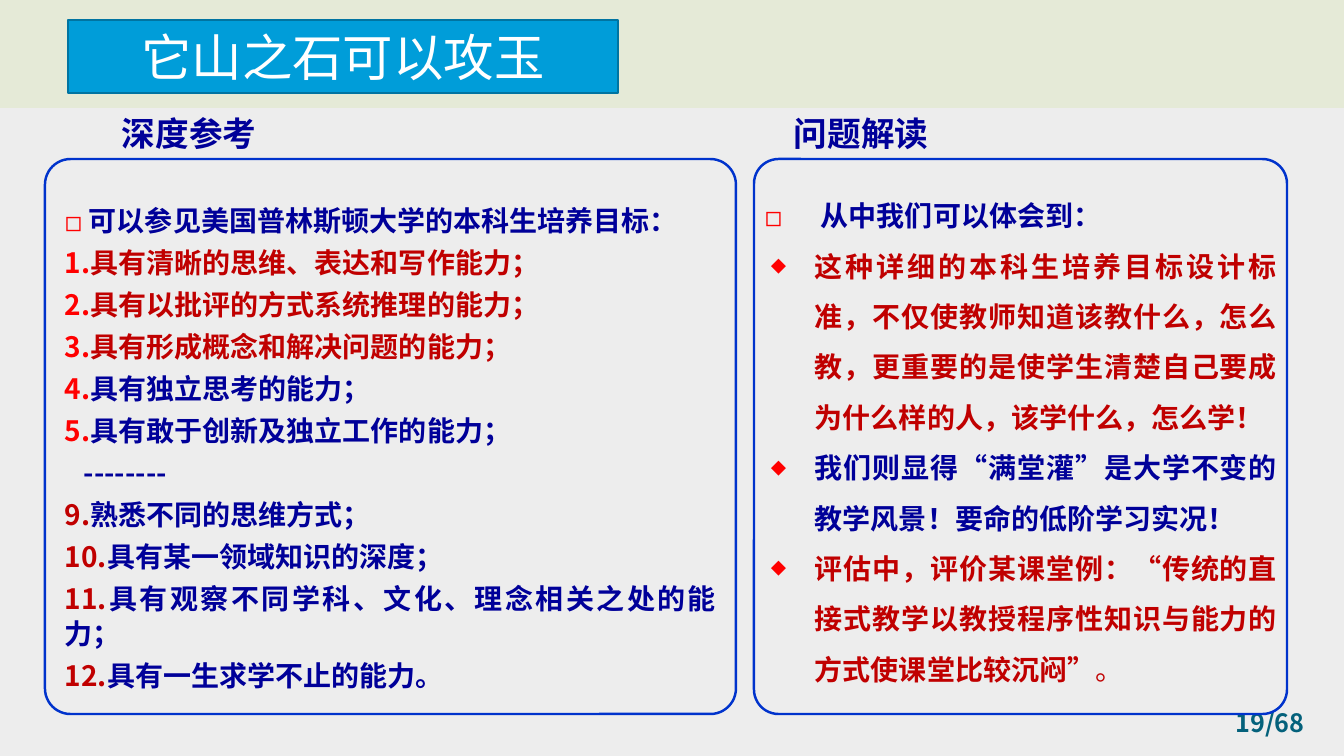
from lxml.etree import SubElement
from pptx import Presentation
from pptx.dml.color import RGBColor
from pptx.enum.shapes import MSO_SHAPE
from pptx.enum.text import MSO_ANCHOR, PP_ALIGN
from pptx.oxml.ns import qn
from pptx.util import Pt

EMU_PER_PX = 914400 / 100.8
NAVY, CRIMSON, RED, BORDER = "000099", "C00000", "FF0000", "0033CC"


def px(length):
    return round(length * EMU_PER_PX)


def rgb(hex_colour):
    return RGBColor.from_string(hex_colour)


def add_bullet(paragraph, marker, size):
    """Put a red marker on the paragraph; the marker "1." numbers it automatically."""
    properties = paragraph._p.get_or_add_pPr()
    SubElement(SubElement(properties, qn("a:buClr")), qn("a:srgbClr"), val=RED)
    SubElement(properties, qn("a:buSzPct"), val=str(size * 1000))
    if marker == "1.":
        SubElement(properties, qn("a:buFont"), typeface="+mj-lt")
        SubElement(properties, qn("a:buAutoNum"), type="arabicPeriod")
    else:
        SubElement(properties, qn("a:buFont"), typeface=SlideBuilder.FONT)
        SubElement(properties, qn("a:buChar"), char=marker)


class SlideBuilder:
    FONT = "Noto Sans CJK SC"

    def __init__(self, slide, background):
        self.slide = slide
        slide.background.fill.solid()
        slide.background.fill.fore_color.rgb = rgb(background)

    def style_font(self, font, size, colour, bold=True):
        font.name, font.size, font.bold = self.FONT, Pt(size), bold
        font.color.rgb = rgb(colour)
        SubElement(font._element, qn("a:ea"), typeface=self.FONT)

    def title(self, text, box, size, fill, line):
        title = self.slide.shapes.title
        title.left, title.top, title.width, title.height = map(px, box)
        title.fill.solid()
        title.fill.fore_color.rgb = rgb(fill)
        title.line.color.rgb, title.line.width = rgb(line), Pt(2)
        frame = title.text_frame
        frame.text = text
        frame.vertical_anchor = MSO_ANCHOR.MIDDLE
        frame.margin_left = frame.margin_top = frame.margin_right = frame.margin_bottom = 0
        frame.paragraphs[0].alignment = PP_ALIGN.CENTER
        self.style_font(frame.paragraphs[0].font, size, "FFFFFF", bold=False)
        title.element.getparent().append(title.element)

    def band(self, box, colour, opacity):
        band = self.slide.shapes.add_shape(MSO_SHAPE.RECTANGLE, *map(px, box))
        band.shadow.inherit = False
        band.line.fill.background()
        band.fill.solid()
        band.fill.fore_color.rgb = rgb(colour)
        tint = band.element.spPr.find(".//" + qn("a:srgbClr"))
        SubElement(tint, qn("a:alpha"), val=str(opacity * 1000))

    def panel(self, box):
        panel = self.slide.shapes.add_shape(MSO_SHAPE.ROUNDED_RECTANGLE, *map(px, box))
        panel.shadow.inherit = False
        panel.adjustments[0] = 0.046
        panel.fill.background()
        panel.line.color.rgb, panel.line.width = rgb(BORDER), Pt(1.75)

    def text_frame(self, box):
        frame = self.slide.shapes.add_textbox(*map(px, box)).text_frame
        frame.word_wrap = True
        return frame

    def label(self, text, box, size, colour, spacing=None, align=PP_ALIGN.LEFT):
        frame = self.text_frame(box)
        frame.vertical_anchor = MSO_ANCHOR.TOP if spacing else MSO_ANCHOR.MIDDLE
        paragraph = frame.paragraphs[0]
        paragraph.text, paragraph.alignment = text, align
        if spacing:
            paragraph.line_spacing = Pt(spacing)
        self.style_font(paragraph.font, size, colour)

    def body(self, box, items, first_spacing, spacing, gap):
        """Items are (marker, marker size, indent, hanging, [(text, colour, bold), ...])."""
        frame = self.text_frame(box)
        for index, (marker, marker_size, indent, hanging, runs) in enumerate(items):
            paragraph = frame.add_paragraph() if index else frame.paragraphs[0]
            paragraph.alignment = PP_ALIGN.JUSTIFY
            paragraph.line_spacing = Pt(spacing if index else first_spacing)
            paragraph.space_before = Pt(gap if index else 0)
            properties = paragraph._p.get_or_add_pPr()
            properties.set("marL", str(px(indent)))
            properties.set("indent", str(-px(hanging)))
            properties.set("hangingPunct", "0")
            if marker:
                add_bullet(paragraph, marker, marker_size)
            if len(runs) == 1:
                paragraph.text = runs[0][0]
                self.style_font(paragraph.font, 20, *runs[0][1:])
                continue
            for text, colour, bold in runs:
                run = paragraph.add_run()
                run.text = text
                self.style_font(run.font, 20, colour, bold)


EARLY_GOALS = [
    ("具有清晰的思维、表达和写作能力；", CRIMSON),
    ("具有以批评的方式系统推理的能力；", CRIMSON),
    ("具有形成概念和解决问题的能力；", CRIMSON),
    ("具有独立思考的能力；", NAVY),
    ("具有敢于创新及独立工作的能力；", NAVY),
]
LATE_GOALS = [
    "熟悉不同的思维方式；",
    "具有某一领域知识的深度；",
    "具有观察不同学科、文化、理念相关之处的能力；",
    "具有一生求学不止的能力。",
]
INSIGHTS = [
    [("这种详细的本科生培养目标设计标准，不仅使教师知道该教什么，怎么教，更重要的是使学生清楚自己要成为什么样的人，该学什么，怎么学！", CRIMSON, True)],
    [("我们则显得“满堂灌”是大学不变的教学风景！要命的低阶学习实况！", NAVY, True)],
    [("评估中，评价某课堂例：“传统的直接式教学以教授程序性知识与能力的方式使课堂比较沉闷”", CRIMSON, True),
     ("。", CRIMSON, False)],
]


def main():
    presentation = Presentation()
    presentation.slide_width, presentation.slide_height = px(1344), px(756)
    slide = presentation.slides.add_slide(presentation.slide_layouts[5])
    builder = SlideBuilder(slide, "EDEDED")

    builder.band((0, 0, 1344, 108), "DBE7B6", 40)
    builder.title("它山之石可以攻玉", (68, 20, 550, 73), 36, "009DD9", "0074A1")
    builder.label("19/68", (1197, 703, 146, 38), 18, "04617B", align=PP_ALIGN.CENTER)

    for heading, heading_left, panel_left, panel_width in (
        ("深度参考", 112, 45, 691),
        ("问题解读", 784, 754, 533),
    ):
        builder.panel((panel_left, 159, panel_width, 555))
        builder.label(heading, (heading_left, 101, 269, 55), 24, NAVY, spacing=34)

    goals = [("◻", 100, 24, 24, [("可以参见美国普林斯顿大学的本科生培养目标：", NAVY, True)])]
    goals += [("1.", 100, 0, 0, [(goal, colour, True)]) for goal, colour in EARLY_GOALS]
    goals.append((None, 100, 19, 0, [("--------", NAVY, True)]))
    goals += [
        (None, 100, 0, 0, [(f"{number}.", CRIMSON, True), (goal, NAVY, True)])
        for number, goal in enumerate(LATE_GOALS, start=9)
    ]
    builder.body((55, 186, 671, 495), goals, first_spacing=33, spacing=25, gap=5)

    insights = [("◻", 100, 56, 56, [("从中我们可以体会到：", NAVY, True)])]
    insights += [("◆", 55, 50, 44, runs) for runs in INSIGHTS]
    builder.body((755, 177, 532, 519), insights, first_spacing=36, spacing=36, gap=0)

    presentation.save("out.pptx")


if __name__ == "__main__":
    main()
